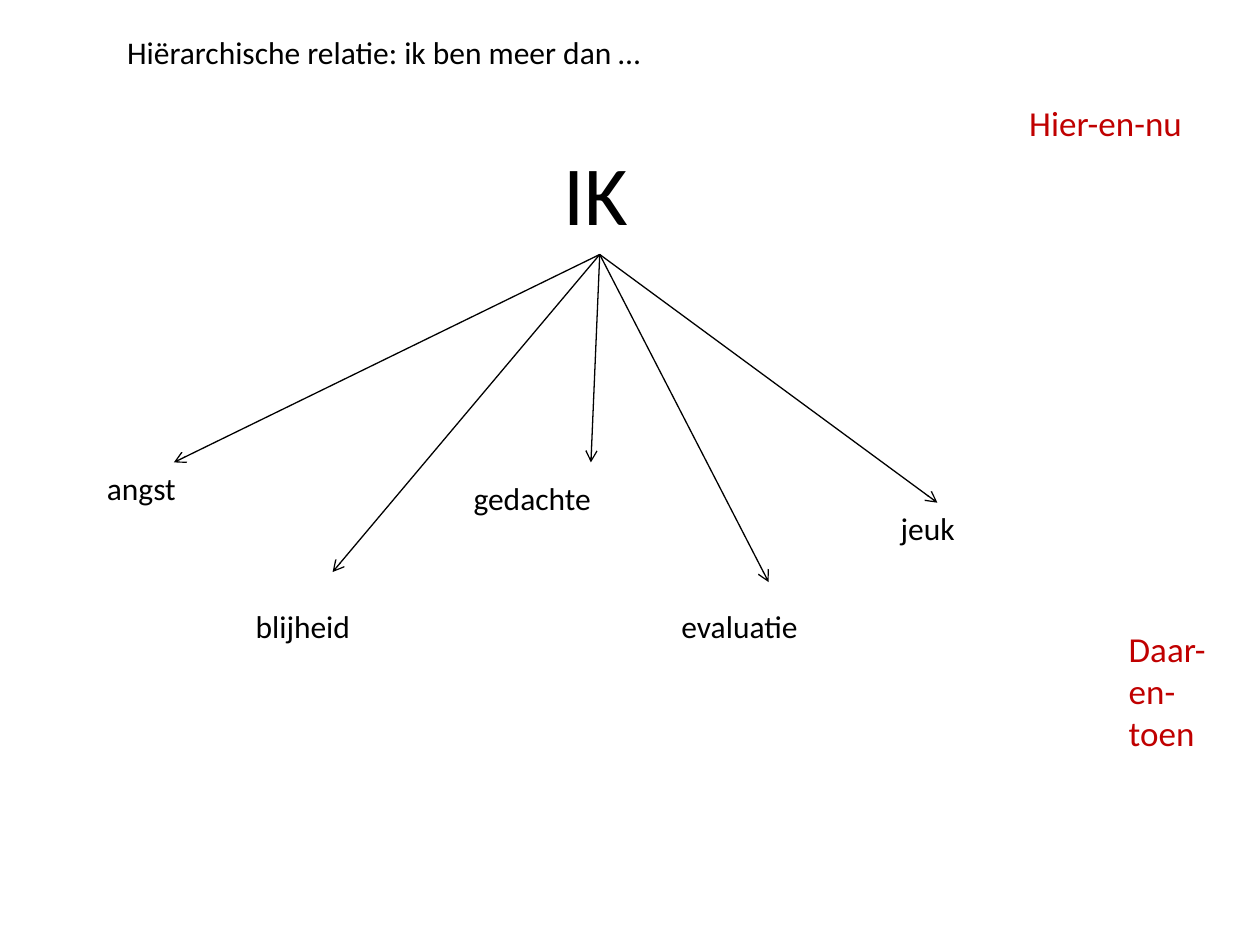
import pptx
import pptx.util
import pptx.dml.color
import pptx.enum.shapes
import pptx.enum.text
import pptx.oxml.ns
from lxml import etree

# Content: positions are in columns and rows of a 10 x 7.5 grid
COLS, ROWS = 10, 7.5

# text, (left, top, width, height), style
LABELS = [
    ("Hiërarchische relatie: ik ben meer dan …", (0.91, 0.21, 6.85, 0.5), "body"),
    ("IK", (4.37, 1.07, 1.18, 0.91), "root"),
    ("Hier-en-nu", (8.07, 0.76, 1.65, 0.44), "frame"),
    ("Daar-en-toen", (8.86, 4.93, 0.87, 1.11), "frame"),
]

# text, (left, top, width) of the label, tip of the arrow that points to it
BRANCHES = [
    ("angst", (0.75, 3.67, 1.26), (1.38, 3.67)),
    ("blijheid", (1.93, 4.77, 1.89), (2.64, 4.54)),
    ("gedachte", (3.66, 3.75, 1.81), (4.69, 3.67)),
    ("evaluatie", (5.31, 4.77, 1.81), (6.1, 4.62)),
    ("jeuk", (7.05, 3.99, 1.5), (7.44, 3.99)),
]
BRANCH_HEIGHT = 0.5
ARROW_START = (4.76, 2.02)

THEME = {
    "font": "Calibri",
    "line": ("000000", 0.75),
    # style: (type size, colour)
    "body": (18, "000000"),
    "root": (48, "000000"),
    "frame": (20, "C00000"),
}

prs = pptx.Presentation()
prs.slide_width = pptx.util.Inches(10)
prs.slide_height = pptx.util.Inches(7.5)
s = prs.slides.add_slide(prs.slide_layouts[6])


def place(*lengths):
    """Turn alternating column and row lengths into slide lengths."""
    cells = (prs.slide_width / COLS, prs.slide_height / ROWS)
    return [round(n * cells[i % 2]) for i, n in enumerate(lengths)]


def rgb(value):
    return pptx.dml.color.RGBColor.from_string(value)


def add_label(text, box, style):
    size, color = THEME[style]
    tf = s.shapes.add_textbox(*place(*box)).text_frame
    tf.word_wrap = True
    tf.auto_size = pptx.enum.text.MSO_AUTO_SIZE.SHAPE_TO_FIT_TEXT
    tf.text = text
    r = tf.paragraphs[0].runs[0]
    r.font.name = THEME["font"]
    r.font.size = pptx.util.Pt(size)
    r.font.color.rgb = rgb(color)


def add_arrow(start, tip):
    color, width = THEME["line"]
    sp = s.shapes.add_connector(
        pptx.enum.shapes.MSO_CONNECTOR.STRAIGHT, *place(*start, *tip))
    sp.line.color.rgb = rgb(color)
    sp.line.width = pptx.util.Pt(width)
    qn = pptx.oxml.ns.qn
    etree.SubElement(sp.line._get_or_add_ln(), qn("a:tailEnd"), type="arrow")
    etree.SubElement(sp._element.spPr, qn("a:effectLst"))


# Title, root and time frames
for label in LABELS:
    add_label(*label)

# Branches from the root
for text, box, tip in BRANCHES:
    add_label(text, (*box, BRANCH_HEIGHT), "body")
    add_arrow(ARROW_START, tip)

prs.save("out.pptx")
